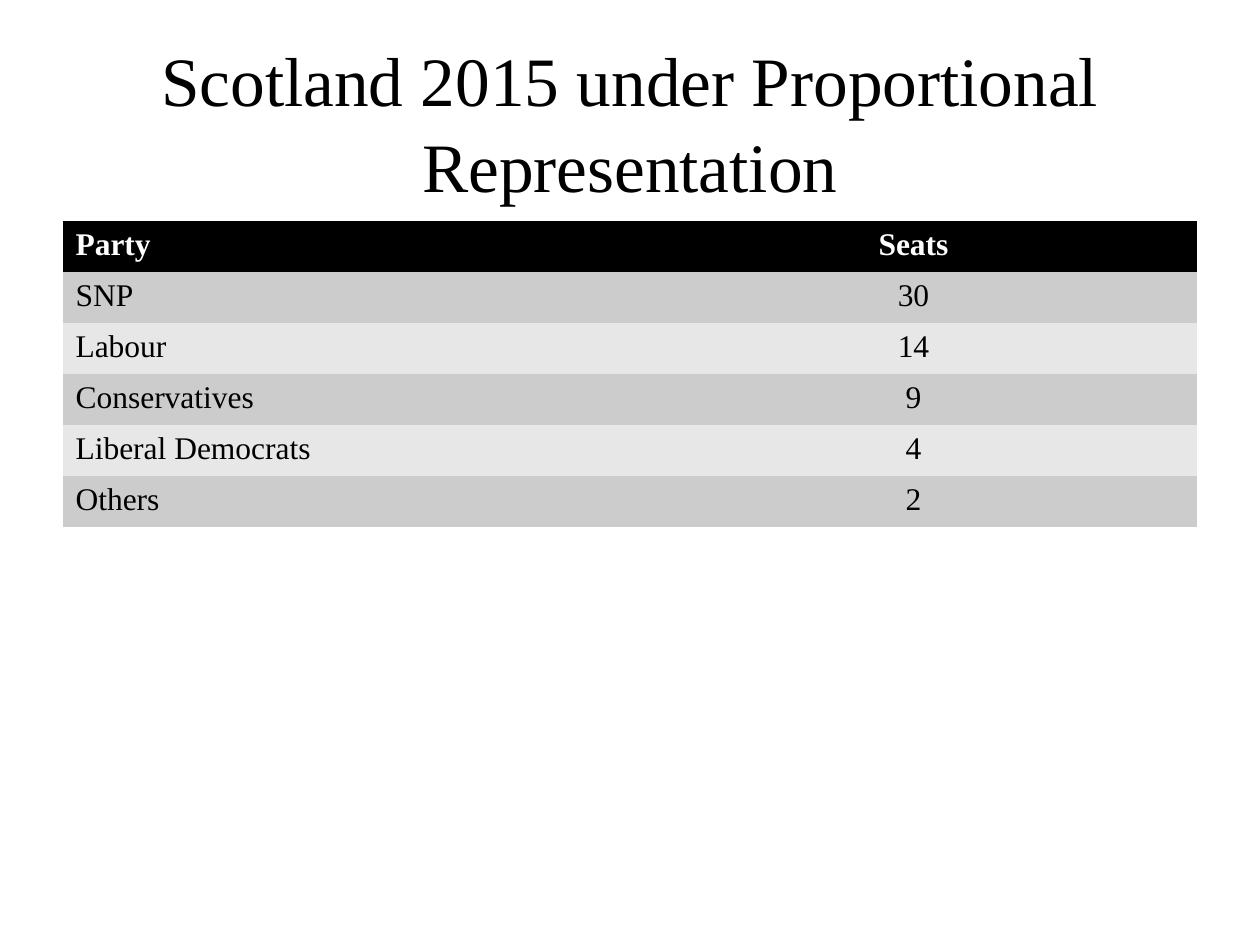
from pptx import Presentation
from pptx import util as u
from pptx.dml import color
from pptx.enum import text

FONT = "Times New Roman"
LEFT, WIDTH = u.Cm(1.27), u.Cm(22.86)
ROW_HEIGHT = u.Cm(1.03)
RESULTS = [
    ("Party", "Seats"),
    ("SNP", "30"),
    ("Labour", "14"),
    ("Conservatives", "9"),
    ("Liberal Democrats", "4"),
    ("Others", "2"),
]


def rgb(value):
    return color.RGBColor.from_string(value)


def add_run(paragraph, words, size, hex_color, bold=False):
    run = paragraph.add_run()
    run.text = words
    run.font.name = FONT
    run.font.size = u.Pt(size)
    run.font.bold = bold
    run.font.color.rgb = rgb(hex_color)


presentation = Presentation()
presentation.slide_width, presentation.slide_height = u.Cm(25.4), u.Cm(19.05)
slide = presentation.slides.add_slide(presentation.slide_layouts[6])

# Title
title = slide.shapes.add_textbox(LEFT, u.Cm(0.76), WIDTH, u.Cm(3.18))
frame = title.text_frame
frame.word_wrap = True
frame.vertical_anchor = text.MSO_ANCHOR.MIDDLE
frame.margin_top, frame.margin_bottom = u.Cm(0.28), u.Cm(0.13)
paragraph = frame.paragraphs[0]
paragraph.alignment = text.PP_ALIGN.CENTER
paragraph.line_spacing = 1.04
add_run(paragraph, "Scotland 2015 under Proportional Representation", 39.6, "000000")

# Seats table: black header, then alternating grey rows
table = slide.shapes.add_table(
    len(RESULTS), 2, LEFT, u.Cm(4.45), WIDTH, ROW_HEIGHT * len(RESULTS)
).table
for row_index, result in enumerate(RESULTS):
    header = row_index == 0
    fill = "000000" if header else ("E7E7E7", "CCCCCC")[row_index % 2]
    for column_index, words in enumerate(result):
        cell = table.cell(row_index, column_index)
        cell.fill.solid()
        cell.fill.fore_color.rgb = rgb(fill)
        paragraph = cell.text_frame.paragraphs[0]
        if column_index == 1:
            paragraph.alignment = text.PP_ALIGN.CENTER
        add_run(paragraph, words, 18, "FFFFFF" if header else "000000", header)

# Plain cells without the white rules of the default table style
table.first_row = False
table.horz_banding = False
style = table._tbl.tblPr.find(
    "{http://schemas.openxmlformats.org/drawingml/2006/main}tableStyleId"
)
style.text = "{2D5ABB26-0587-4C30-8999-92F81FD0307C}"

presentation.save("out.pptx")
